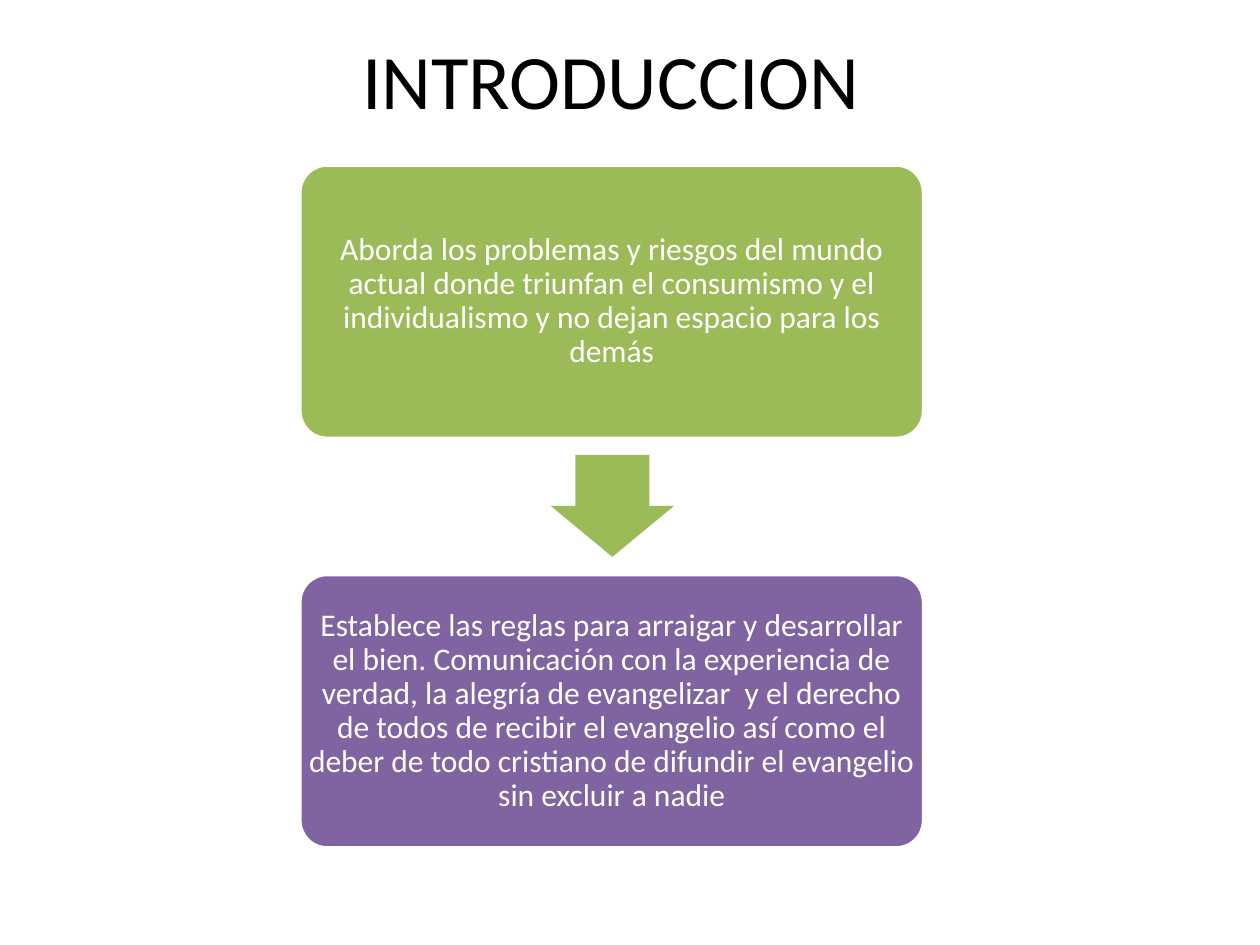
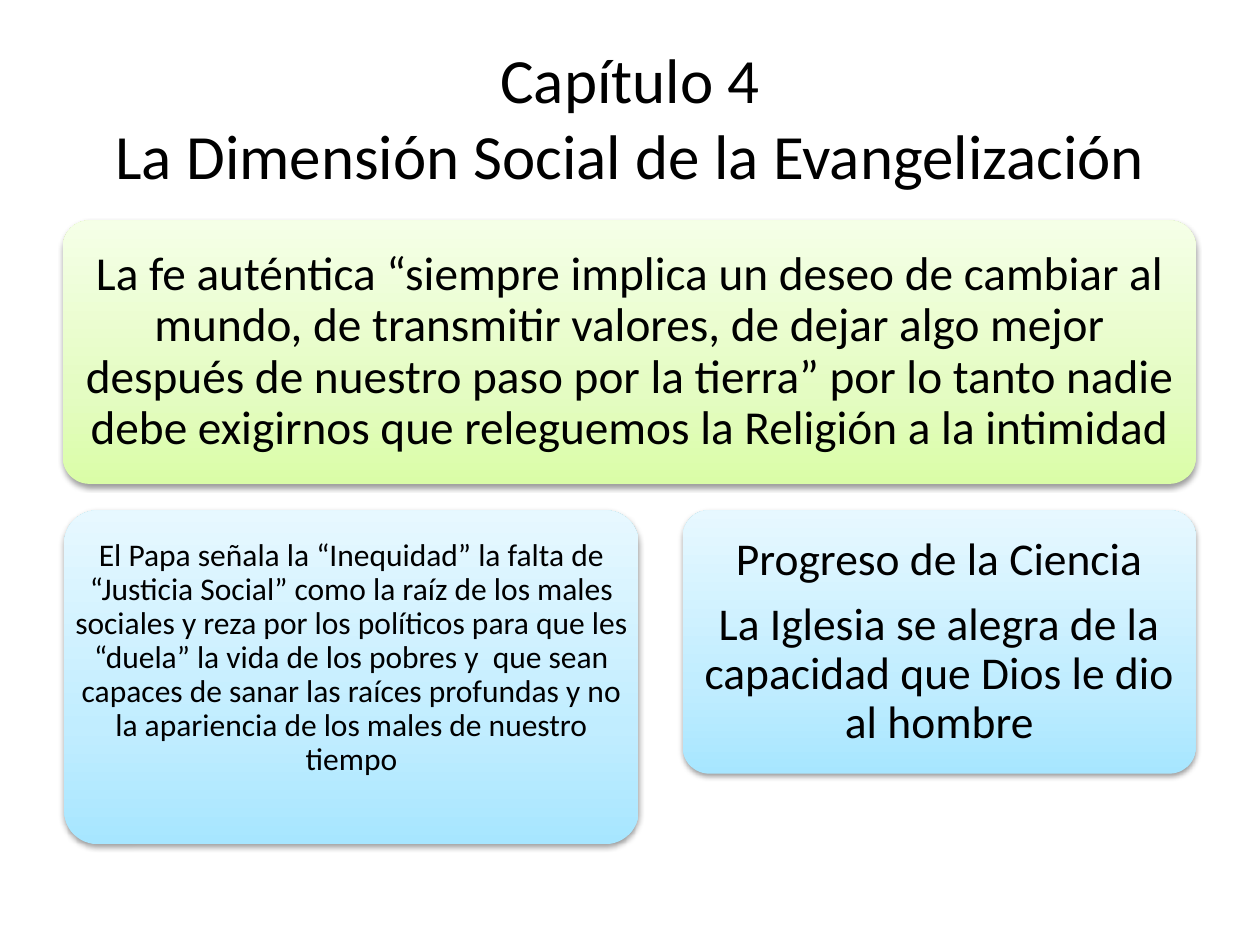
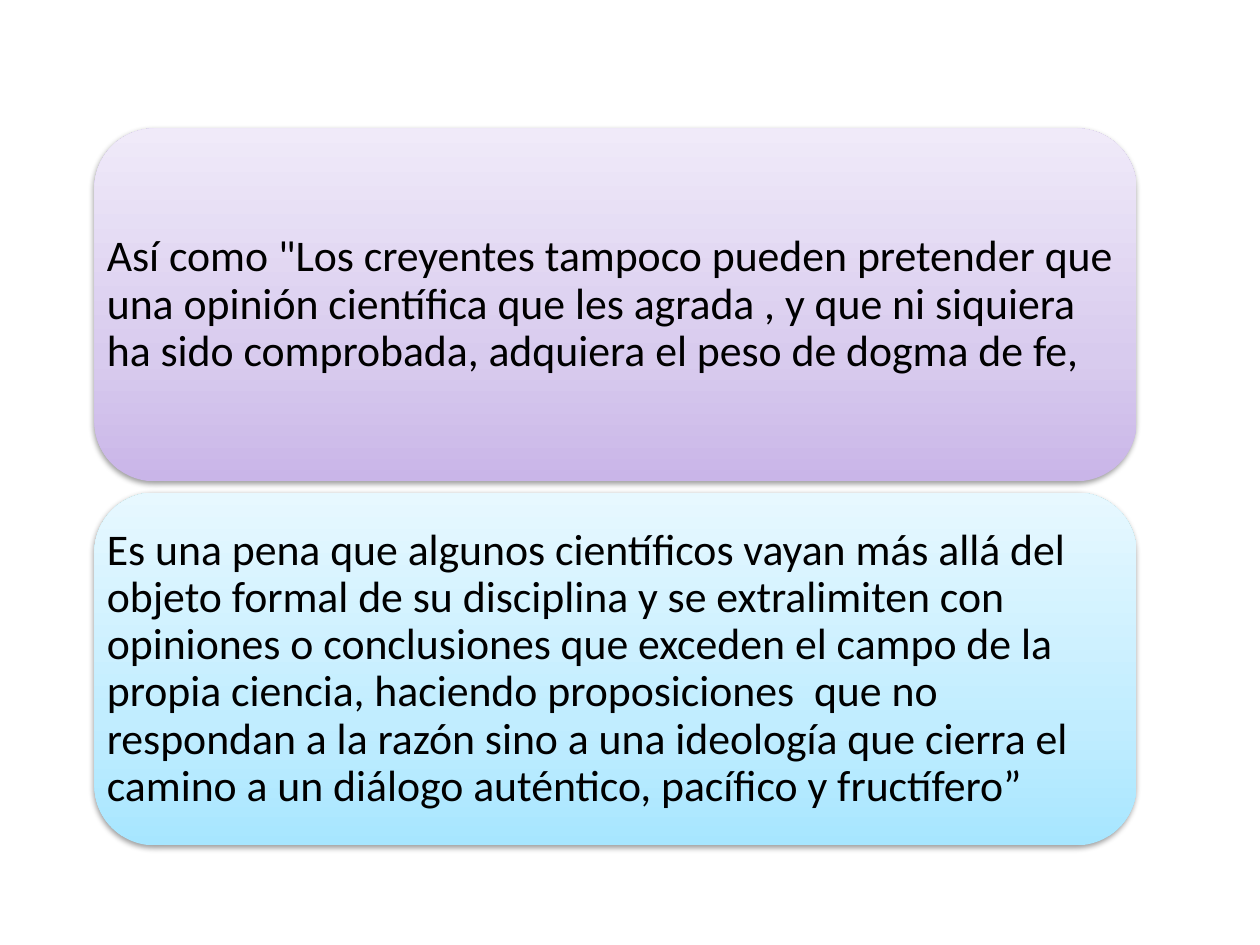
from copy import deepcopy
from pptx import Presentation
from pptx.dml.color import RGBColor
from pptx.enum.shapes import MSO_SHAPE as Shape
from pptx.enum.text import MSO_ANCHOR as Anchor, PP_ALIGN as Align
from pptx.oxml import parse_xml
from pptx.oxml.ns import nsdecls, qn
from pptx.util import Inches, Pt

# Shared look
rgb = RGBColor.from_string
FONT = "Calibri"
BLACK, WHITE = "000000", "FFFFFF"
GREEN, PURPLE = "9BBB59", "8064A2"
LIME = ("DAFDA7", "E4FCC2", "F5FFE7")
SKY = ("A7E6FF", "C1EDFF", "E7F8FF")
LILAC = ("C9B5E8", "D8CBEE", "F0EAF9")
STOPS = (0, 0.35, 1)
SHADE = (
    f'<a:outerShdw {nsdecls("a")} blurRad="40000" dist="20000" dir="5400000" rotWithShape="0">'
    '<a:srgbClr val="000000"><a:alpha val="38000"/></a:srgbClr></a:outerShdw>'
)


def write(slide, text, at, size, color=BLACK, align=Align.CENTER, pad=0.1, foot=None, line=0.9, gap=0):
    """Place text over the area; foot is the bottom inset when it differs."""
    frame = slide.shapes.add_textbox(*map(Inches, at)).text_frame
    frame.word_wrap = True
    frame.vertical_anchor = Anchor.MIDDLE
    frame.margin_left = frame.margin_right = frame.margin_top = Inches(pad)
    frame.margin_bottom = Inches(pad if foot is None else foot)
    frame.text = text
    for i, para in enumerate(frame.paragraphs):
        para.alignment = align
        para.line_spacing = line
        para.space_before = Pt(gap if i else 0)
        for run in para.runs:
            run.font.name = FONT
            run.font.size = Pt(size)
            run.font.color.rgb = rgb(color)


def draw(slide, kind, at, fill, adj, edge=None):
    """Draw a shape: one colour is flat, three make a shaded gradient."""
    shape = slide.shapes.add_shape(kind, *map(Inches, at))
    for i, part in enumerate(adj):
        shape.adjustments[i] = part
    if edge:
        shape.line.color.rgb = rgb(edge)
        shape.line.width = Pt(2)
    else:
        shape.line.fill.background()
    shape.shadow.inherit = False
    if isinstance(fill, str):
        shape.fill.solid()
        shape.fill.fore_color.rgb = rgb(fill)
        return
    shape.fill.gradient()
    shape.fill.gradient_angle = 90
    props = shape._element.spPr
    stops = props.find(qn("a:gradFill")).find(qn("a:gsLst"))
    stops.append(deepcopy(stops[0]))
    for stop, spot, tone in zip(shape.fill.gradient_stops, STOPS, fill):
        stop.position = spot
        stop.color.rgb = rgb(tone)
    props.find(qn("a:effectLst")).append(parse_xml(SHADE))


deck = Presentation()
deck.slide_width, deck.slide_height = Inches(10), Inches(7.5)
intro, theme, quote = [deck.slides.add_slide(deck.slide_layouts[6]) for _ in range(3)]

# Titles
for slide, text, left, top, size in (
    (intro, "INTRODUCCION", 0.35, 0, 44),
    (theme, "Capítulo 4\vLa Dimensión Social de la Evangelización", 0.5, 0.3, 36),
):
    write(slide, text, (left, top, 9, 1.25), size, line=1)

# Slide 1: two steps joined by an arrow
steps = (
    (GREEN, "Aborda los problemas y riesgos del mundo actual donde triunfan el consumismo y el "
            "individualismo y no dejan espacio para los demás"),
    (PURPLE, "Establece las reglas para arraigar y desarrollar el bien. Comunicación con la "
             "experiencia de verdad, la alegría de evangelizar  y el derecho de todos de recibir "
             "el evangelio así como el deber de todo cristiano de difundir el evangelio sin "
             "excluir a nadie"),
)
for i, (fill, text) in enumerate(steps):
    at = (2.38, 1.31 + 3.25 * i, 4.95, 2.17)
    draw(intro, Shape.ROUNDED_RECTANGLE, at, fill, [0.1], edge=WHITE)
    write(intro, text, at, 18, color=WHITE, pad=0.07)
draw(intro, Shape.DOWN_ARROW, (4.37, 3.61, 0.98, 0.81), GREEN, [0.6, 0.5])

# Slide 2: main idea above two cards
cards = (
    ((0.5, 1.75, 8.99, 2.09), LIME, 27, 0.11, 0.11,
     "La fe auténtica “siempre implica un deseo de cambiar al mundo, de transmitir valores, de "
     "dejar algo mejor después de nuestro paso por la tierra” por lo tanto nadie debe exigirnos "
     "que releguemos la Religión a la intimidad"),
    ((0.51, 4.05, 4.56, 2.65), SKY, 18, 0.07, 0.37,
     "El Papa señala la “Inequidad” la falta de “Justicia Social” como la raíz de los males "
     "sociales y reza por los políticos para que les “duela” la vida de los pobres y  que sean "
     "capaces de sanar las raíces profundas y no la apariencia de los males de nuestro tiempo"),
    ((5.42, 4.05, 4.07, 2.09), SKY, 26, 0.11, 0.11,
     "Progreso de la Ciencia\nLa Iglesia se alegra de la capacidad que Dios le dio al hombre"),
)
for at, fill, size, pad, foot, text in cards:
    draw(theme, Shape.ROUNDED_RECTANGLE, at, fill, [0.1])
    write(theme, text, at, size, pad=pad, foot=foot, gap=9)

# Slide 3: two stacked quotes
quotes = (
    (LILAC, 'Así como "Los creyentes tampoco pueden pretender que una opinión científica que les '
            'agrada , y que ni siquiera ha sido comprobada, adquiera el peso de dogma de fe,'),
    (SKY, "Es una pena que algunos científicos vayan más allá del objeto formal de su disciplina "
          "y se extralimiten con opiniones o conclusiones que exceden el campo de la propia "
          "ciencia, haciendo proposiciones  que no respondan a la razón sino a una ideología que "
          "cierra el camino a un diálogo auténtico, pacífico y fructífero”"),
)
for i, (fill, text) in enumerate(quotes):
    at = (0.75, 1.02 + 2.89 * i, 8.27, 2.8)
    draw(quote, Shape.ROUNDED_RECTANGLE, at, fill, [0.17])
    write(quote, text, at, 25, align=Align.LEFT)

deck.save("out.pptx")
